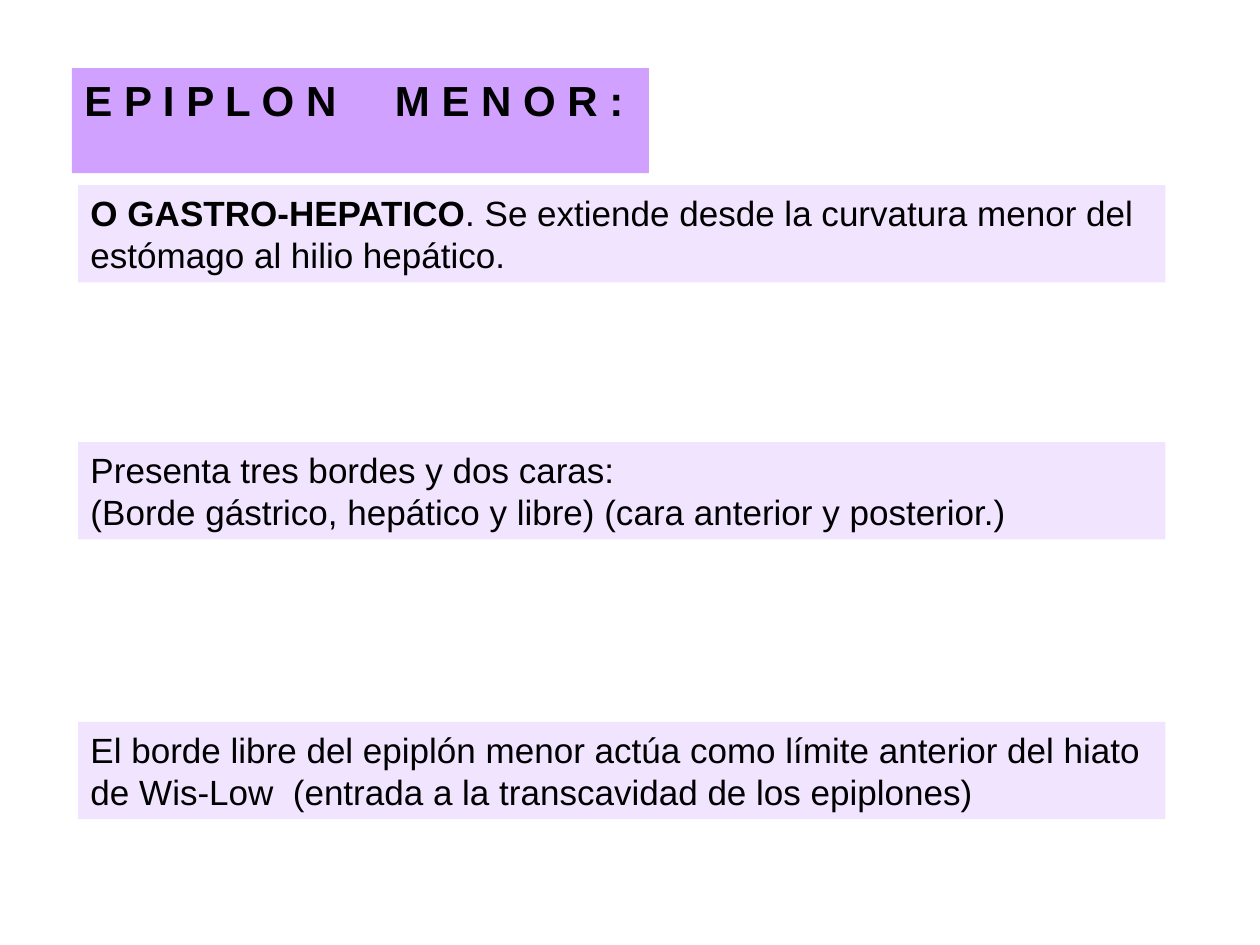
from pptx import Presentation
from pptx import util as u
from pptx.dml.color import RGBColor
from pptx.enum import text
from pptx.oxml.ns import qn
from lxml import etree

VIOLET = RGBColor(0x99, 0x33, 0xFF)
BLACK = RGBColor(0, 0, 0)
WIDTH, HEIGHT = 10, 7.5
TITLE_ALPHA, NOTE_ALPHA = 46, 13
WORD_GAP = 26.7

TITLE = [("E P I P L O N", 0), (" ", WORD_GAP), ("M E N O R :", 0)]
NOTES = [
    (0.196, [[("O GASTRO-HEPATICO", True),
              (". Se extiende desde la curvatura menor del estómago al hilio hepático.", False)]]),
    (0.468, [[("Presenta tres bordes y dos caras:", False)],
             [("(Borde gástrico, hepático y libre) (cara anterior y posterior.)", False)]]),
    (0.764, [[("El borde libre del epiplón menor actúa como límite anterior del hiato "
               "de Wis-Low  (entrada a la transcavidad de los epiplones)", False)]]),
]


class Deck:
    font = {"name": "Arial"}
    frame = {"margin_left": u.Inches(0.1), "margin_right": u.Inches(0.1),
             "margin_top": u.Inches(0.05), "margin_bottom": u.Inches(0.05),
             "vertical_anchor": text.MSO_ANCHOR.TOP,
             "auto_size": text.MSO_AUTO_SIZE.SHAPE_TO_FIT_TEXT}

    def __init__(self):
        self.prs = Presentation()
        self.prs.slide_width = u.Inches(WIDTH)
        self.prs.slide_height = u.Inches(HEIGHT)
        self.s = self.prs.slides.add_slide(self.prs.slide_layouts[5])

    def box(self, x, y, w, h):
        return [u.Inches(share * side) for share, side in
                zip((x, y, w, h), (WIDTH, HEIGHT, WIDTH, HEIGHT))]

    def style(self, obj, values):
        for name, value in values.items():
            setattr(obj, name, value)

    def tint(self, sp, alpha):
        sp.fill.solid()
        sp.fill.fore_color.rgb = VIOLET
        color = sp.fill._xPr.find(qn("a:solidFill"))[0]
        etree.SubElement(color, qn("a:alpha"), val=str(alpha * 1000))

    def run(self, p, words, size, bold):
        r = p.add_run()
        r.text = words
        self.style(r.font, {**self.font, "size": u.Pt(size), "bold": bold})
        r.font.color.rgb = BLACK
        return r

    def title(self, box, runs):
        sp = self.s.shapes.title
        self.style(sp, dict(zip(("left", "top", "width", "height"), self.box(*box))))
        self.tint(sp, TITLE_ALPHA)
        tf = sp.text_frame
        self.style(tf, {**self.frame, "word_wrap": False})
        p = tf.paragraphs[0]
        p.alignment = text.PP_ALIGN.LEFT
        for words, gap in runs:
            r = self.run(p, words, 24, True)
            if gap:
                r.font._element.set("spc", str(round(gap * 100)))

    def note(self, box, paragraphs):
        sp = self.s.shapes.add_textbox(*self.box(*box))
        self.tint(sp, NOTE_ALPHA)
        tf = sp.text_frame
        self.style(tf, {**self.frame, "word_wrap": True})
        for i, runs in enumerate(paragraphs):
            p = tf.add_paragraph() if i else tf.paragraphs[0]
            for words, bold in runs:
                self.run(p, words, 20, bold)


def main():
    deck = Deck()
    deck.title((0.057, 0.072, 0.458, 0.067), TITLE)
    for y, paragraphs in NOTES:
        deck.note((0.062, y, 0.863, 0.103), paragraphs)
    deck.prs.save("out.pptx")


if __name__ == "__main__":
    main()
